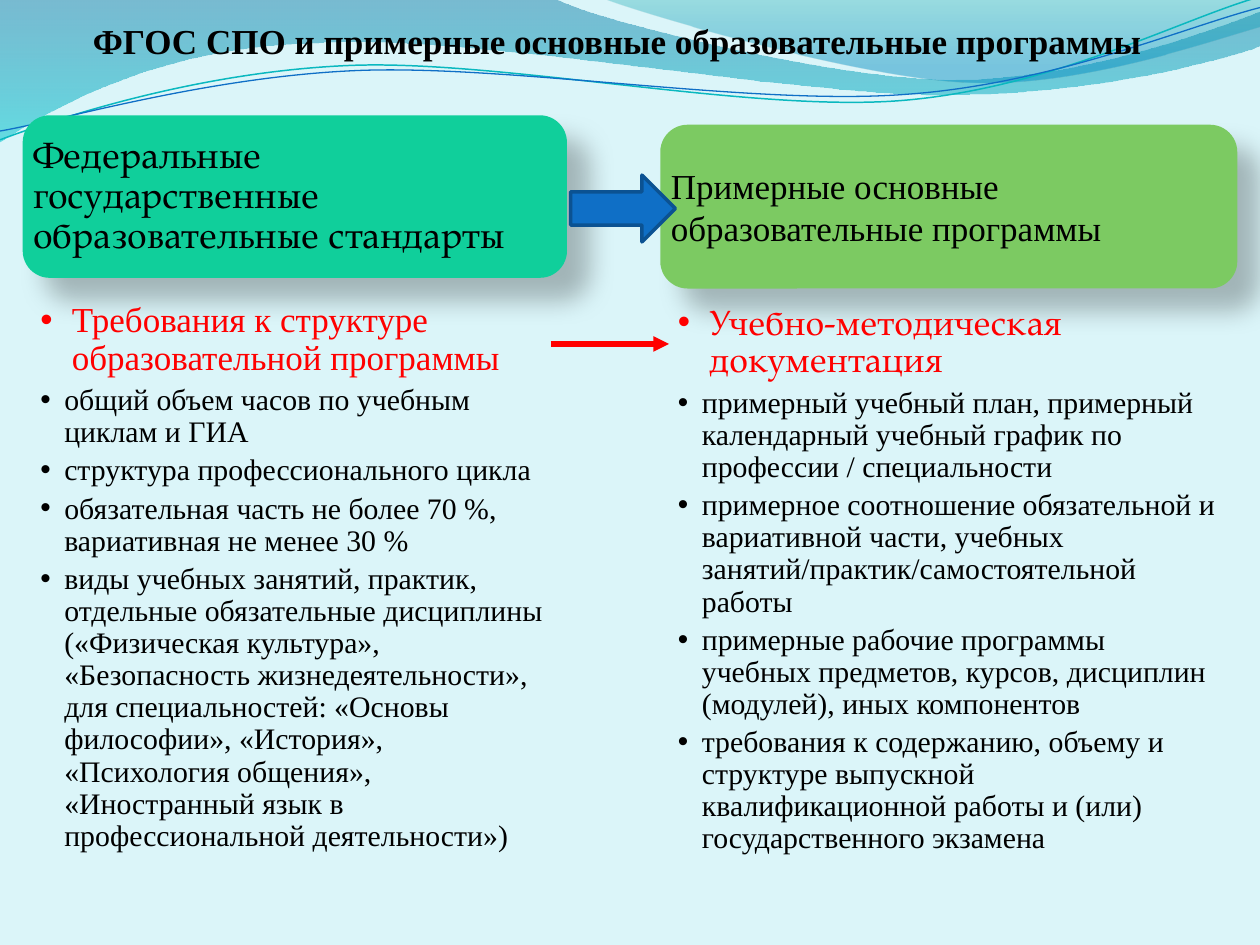
"""Build a slide comparing education standards with model programmes."""
import math
from dataclasses import dataclass

from lxml import etree
from pptx import Presentation
from pptx import util as u
from pptx.dml.color import RGBColor
from pptx.enum import shapes, text
from pptx.oxml import ns

WIDTH, HEIGHT = u.Inches(10), u.Inches(7.5)
COL, ROW = WIDTH / 100, HEIGHT / 75


@dataclass(frozen=True)
class Theme:
    """Colours, fonts and type sizes."""
    back: str = "DBF5F9"
    ink: str = "000000"
    accent: str = "FF0000"
    teal: str = "10CF9B"
    green: str = "7CCA62"
    blue: str = "0F6FC6"
    blue_edge: str = "0B5292"
    aqua: str = "0AB8BF"
    serif: str = "Times New Roman"
    book: str = "TeX Gyre Pagella"
    head: float = 20
    card: float = 21
    item: float = 17


T = Theme()


@dataclass(frozen=True)
class Box:
    """A frame in grid columns and rows."""
    col: float
    row: float
    cols: float
    rows: float

    def emu(self) -> dict:
        """Return the frame as position attributes."""
        return {"left": u.Emu(int(self.col * COL)), "top": u.Emu(int(self.row * ROW)),
                "width": u.Emu(int(self.cols * COL)), "height": u.Emu(int(self.rows * ROW))}


@dataclass(frozen=True)
class Wave:
    """An outline of lines (2 numbers) and cubic curves (6 numbers), in grid units."""
    start: tuple
    steps: tuple
    stops: tuple = ()
    line: str = ""
    weight: float = 0
    turn: float = 0
    pivot: tuple = (0, 0)


@dataclass(frozen=True)
class Column:
    """A card with its bulleted list."""
    card: Box
    fill: str
    label: str
    font: str
    size: float
    spacing: float
    body: Box
    top: float
    lead: str
    lead_font: str
    items: tuple


WAVES = (
    Wave((0, 0), ((44, -0.1), (47.6, 1.7, 66.4, 6.3, 75.8, 6.3), (85.3, 6.3, 95.8, 2.6, 100, 0.9),
                  (100.1, 3.6), (98.3, 4.4, 87, 7.6, 74.6, 7.5), (62.2, 7.5, 38.2, 2.8, 25.7, 3.4),
                  (12.9, 3.6, 4.6, 8.3, -0.1, 11.3), (0, 0)),
         ((0, "0074A1", 45), (1, "00C6CF", 55))),
    Wave((47.9, -0.1), ((50.9, 1.1, 68.2, 6.2, 76.9, 6.5), (85.6, 6.9, 96.1, 3.2, 100, 2.1),
                        (100, 0), (47.9, -0.1)),
         ((0, "00A1A9", 30), (0.8, "008BBF", 45))),
    Wave((0, 11.1), ((4.8, 9.3, 15.8, 5.7, 27.7, 5.2), (39.5, 4.7, 59.3, 8.9, 71.3, 8),
                     (83.3, 7.1, 93.8, 1.5, 99.8, -0.2)),
         line=T.aqua, weight=0.85, turn=-2.7, pivot=(49.9, 5.75)),
    Wave((0, 10.4), ((4.7, 9.6, 16.4, 6.1, 28.3, 5.6), (40.3, 5.1, 59.7, 8.4, 71.7, 7.5),
                     (83.6, 6.7, 94.1, 2.1, 100, 0.6)),
         line=T.blue, weight=0.75, turn=-2.7, pivot=(49.95, 5.9)),
)

COLUMNS = (
    Column(Box(1.8, 9.15, 43.2, 12.9), T.teal,
           "Федеральные государственные образовательные стандарты", T.book, T.card, 0.9,
           Box(1.8, 9.2, 43.2, 58.5), 1.48,
           "Требования к структуре образовательной программы", T.serif,
           ("общий объем часов по учебным циклам и ГИА",
            "структура профессионального цикла",
            "обязательная часть не более 70 %, вариативная не менее 30 %",
            "виды учебных занятий, практик, отдельные обязательные дисциплины («Физическая "
            "культура», «Безопасность жизнедеятельности», для специальностей: «Основы философии», "
            "«История», «Психология общения», «Иностранный язык в профессиональной "
            "деятельности»)")),
    Column(Box(52.4, 9.9, 45.8, 13), T.green,
           "Примерные основные образовательные программы", T.serif, T.head, 1,
           Box(52.4, 24, 45.9, 33.5), 0.02,
           "Учебно-методическая документация", T.book,
           ("примерный учебный план, примерный календарный учебный график по профессии / "
            "специальности",
            "примерное соотношение обязательной и вариативной части, учебных "
            "занятий/практик/самостоятельной работы",
            "примерные рабочие программы учебных предметов, курсов, дисциплин (модулей), иных "
            "компонентов",
            "требования к содержанию, объему и структуре выпускной квалификационной работы и (или) "
            "государственного экзамена")),
)


def apply(target, values: dict) -> None:
    """Set each named attribute on the target."""
    for name, value in values.items():
        setattr(target, name, value)


def sub(parent, tag: str, **attrs):
    """Append a DrawingML child element."""
    return etree.SubElement(parent, ns.qn(f"a:{tag}"), {k: str(v) for k, v in attrs.items()})


def frame(sp, anchor, left: float, top: float, right: float, bottom: float):
    """Format a text frame with insets in inches and return it."""
    tf = sp.text_frame
    apply(tf, {"word_wrap": True, "auto_size": text.MSO_AUTO_SIZE.NONE, "vertical_anchor": anchor,
               "margin_left": u.Inches(left), "margin_top": u.Inches(top),
               "margin_right": u.Inches(right), "margin_bottom": u.Inches(bottom)})
    return tf


def write(p, words: str, font: str, size: float, color: str = T.ink, bold: bool = False, **fmt):
    """Write one formatted run into a paragraph."""
    apply(p, {"space_before": u.Pt(0), **fmt})
    r = p.add_run()
    r.text = words
    apply(r.font, {"name": font, "size": u.Pt(size), "bold": bold})
    r.font.color.rgb = RGBColor.from_string(color)


def paint(sp, fill: str) -> None:
    """Give a shape a flat fill and no shadow or line."""
    sp.shadow.inherit = False
    sp.fill.solid()
    sp.fill.fore_color.rgb = RGBColor.from_string(fill)
    sp.line.fill.background()


def stroke(line, color: str, weight: float) -> None:
    """Set line colour and weight."""
    line.color.rgb = RGBColor.from_string(color)
    line.width = u.Pt(weight)


def unturned(wave: Wave, numbers: tuple) -> list:
    """Return slide points in EMU with the wave's rotation taken out."""
    cos, sin = math.cos(math.radians(-wave.turn)), math.sin(math.radians(-wave.turn))
    cx, cy = wave.pivot
    return [(round((cx + (x - cx) * cos - (y - cy) * sin) * COL),
             round((cy + (x - cx) * sin + (y - cy) * cos) * ROW))
            for x, y in zip(numbers[::2], numbers[1::2])]


def draw_wave(s, wave: Wave) -> None:
    """Draw a filled or stroked wave with true curves."""
    steps = [unturned(wave, step) for step in wave.steps]
    builder = s.shapes.build_freeform(*unturned(wave, wave.start)[0])
    builder.add_line_segments([step[-1] for step in steps], close=bool(wave.stops))
    sp = builder.convert_to_shape()
    for segment, step in zip(list(sp.element.spPr.iter(ns.qn("a:lnTo"))), steps):
        if len(step) == 3:
            curve = etree.Element(ns.qn("a:cubicBezTo"))
            for x, y in step:
                sub(curve, "pt", x=x - sp.left, y=y - sp.top)
            segment.getparent().replace(segment, curve)
    sp.rotation = wave.turn
    sp.shadow.inherit = False
    if not wave.stops:
        sp.fill.background()
        stroke(sp.line, wave.line, wave.weight)
        return
    sp.line.fill.background()
    sp.fill.gradient()
    sp.fill.gradient_angle = 270
    for stop, (position, color, _) in zip(sp.fill.gradient_stops, wave.stops):
        stop.position = position
        stop.color.rgb = RGBColor.from_string(color)
    for clr, (_, _, opacity) in zip(sp.element.spPr.iter(ns.qn("a:srgbClr")), wave.stops):
        sub(clr, "alpha", val=opacity * 1000)


def draw_column(s, column: Column, body) -> None:
    """Draw a shadowed card and fill its list placeholder."""
    sp = s.shapes.add_shape(shapes.MSO_SHAPE.ROUNDED_RECTANGLE, **column.card.emu())
    paint(sp, column.fill)
    shadow = sub(sp.element.spPr.find(ns.qn("a:effectLst")), "outerShdw", blurRad=u.Pt(15),
                 dist=u.Pt(18), dir=45 * 60000, algn="tl", rotWithShape=0)
    sub(sub(shadow, "srgbClr", val=T.ink), "alpha", val=26000)
    tf = frame(sp, text.MSO_ANCHOR.MIDDLE, 0.02, 0.02, 0.1, 0.02)
    write(tf.paragraphs[0], column.label, column.font, column.size,
          alignment=text.PP_ALIGN.LEFT, line_spacing=column.spacing)

    apply(body, column.body.emu())
    body.element.getparent().append(body.element)
    tf = frame(body, text.MSO_ANCHOR.TOP, 0.14, column.top, 0.16, 0.03)
    rows = [(column.lead, column.lead_font, T.head, T.accent, 0.25)]
    rows += [(item, T.serif, T.item, T.ink, 0.19) for item in column.items]
    for i, (words, font, size, color, indent) in enumerate(rows):
        p = tf.add_paragraph() if i else tf.paragraphs[0]
        write(p, words, font, size, color, level=1, line_spacing=0.9, space_after=u.Pt(size / 5))
        pPr = p._p.get_or_add_pPr()
        pPr.set("marL", str(u.Inches(indent)))
        pPr.set("indent", str(-u.Inches(indent)))
        sub(pPr, "buChar", char="•")


def main() -> None:
    """Assemble and save the slide."""
    prs = Presentation()
    apply(prs, {"slide_width": WIDTH, "slide_height": HEIGHT})
    s = prs.slides.add_slide(prs.slide_layouts[3])
    s.background.fill.solid()
    s.background.fill.fore_color.rgb = RGBColor.from_string(T.back)
    title, *bodies = s.placeholders
    for wave in WAVES:
        draw_wave(s, wave)

    apply(title, Box(4.3, 3.6, 90, 4.6).emu())
    title.element.getparent().append(title.element)
    tf = frame(title, text.MSO_ANCHOR.BOTTOM, 0, 0, 0.06, 0.33)
    write(tf.paragraphs[0], "ФГОС СПО и примерные основные образовательные программы",
          T.serif, T.head, bold=True, alignment=text.PP_ALIGN.CENTER)

    for column, body in zip(COLUMNS, bodies):
        draw_column(s, column, body)

    arrow = s.shapes.add_shape(shapes.MSO_SHAPE.RIGHT_ARROW, **Box(45.3, 13.9, 8.3, 5.3).emu())
    paint(arrow, T.blue)
    stroke(arrow.line, T.blue_edge, 2)
    link = s.shapes.add_connector(shapes.MSO_CONNECTOR.STRAIGHT, int(43.7 * COL), int(27.3 * ROW),
                                  int(53.1 * COL), int(27.3 * ROW))
    stroke(link.line, T.accent, 3)
    sub(link.line._get_or_add_ln(), "tailEnd", type="triangle")
    sub(link.element.spPr, "effectLst")
    prs.save("out.pptx")


if __name__ == "__main__":
    main()
